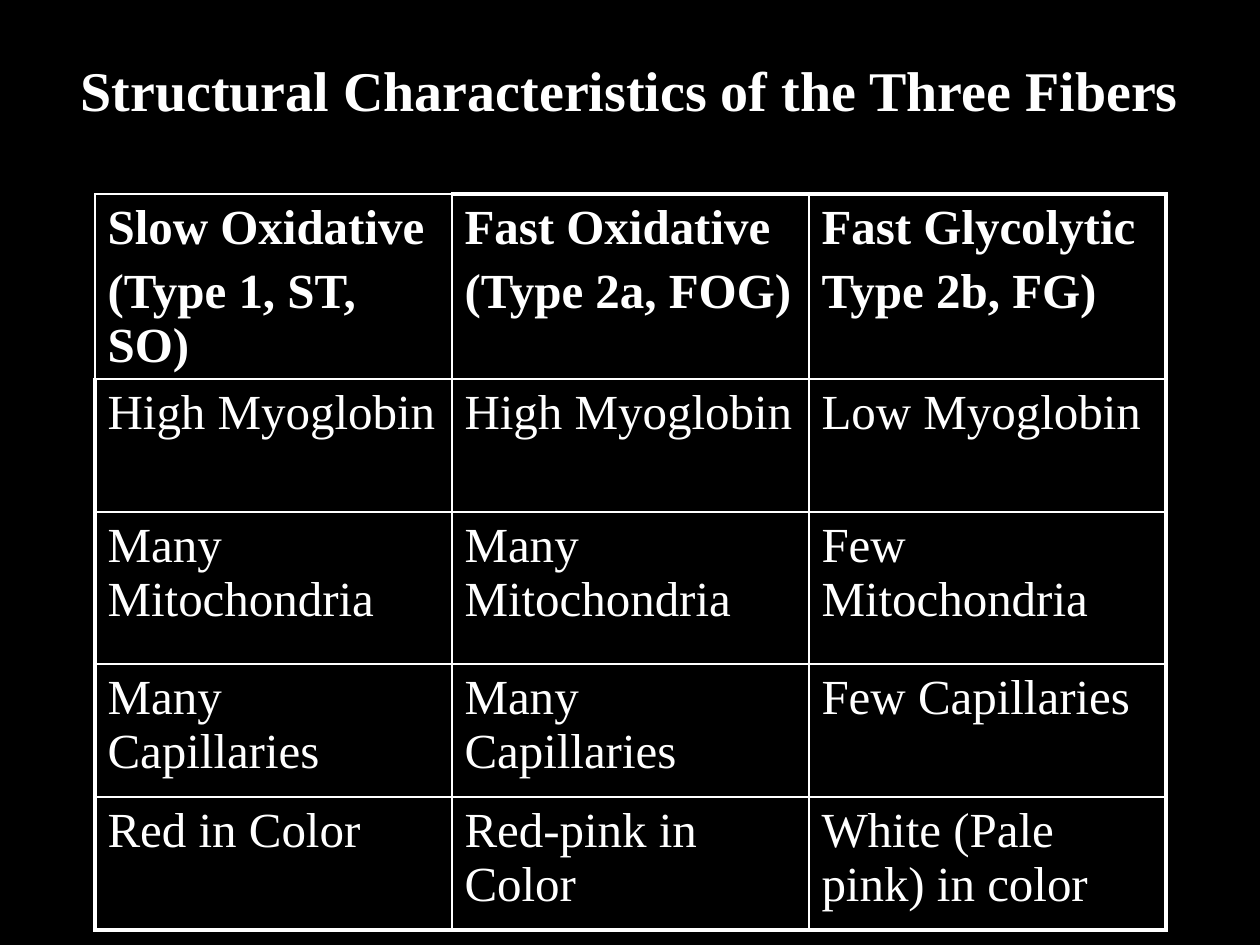
import lxml.etree
import pptx
import pptx.dml.color
import pptx.enum.text
import pptx.oxml.ns
import pptx.util

EMU_PER_PX = 914400 / 126
BLACK = pptx.dml.color.RGBColor(0x00, 0x00, 0x00)
WHITE = pptx.dml.color.RGBColor(0xFF, 0xFF, 0xFF)

TITLE = "Structural Characteristics of the Three Fibers"
FIBER_ROWS = [
    ["Slow Oxidative\n(Type 1, ST, SO)", "Fast Oxidative\n(Type 2a, FOG)", "Fast Glycolytic\nType 2b, FG)"],
    ["High Myoglobin", "High Myoglobin", "Low Myoglobin"],
    ["Many Mitochondria", "Many Mitochondria", "Few Mitochondria"],
    ["Many Capillaries", "Many Capillaries", "Few Capillaries"],
    ["Red in Color", "Red-pink in Color", "White (Pale pink) in color"],
]
ROW_HEIGHTS = [133, 133, 152, 133, 133]
COLUMN_WIDTH = 357


def px(length):
    return pptx.util.Emu(round(length * EMU_PER_PX))


def write_text(frame, text, size, bold=False, align=pptx.enum.text.PP_ALIGN.LEFT,
               space_before=0, font="Times New Roman", color=WHITE):
    """Put each line of text in a paragraph of its own."""
    for index, line in enumerate(text.split("\n")):
        paragraph = frame.paragraphs[0] if index == 0 else frame.add_paragraph()
        paragraph.alignment = align
        paragraph.space_before = pptx.util.Pt(space_before)
        run = paragraph.add_run()
        run.text = line
        run.font.name = font
        run.font.size = pptx.util.Pt(size)
        run.font.bold = bold
        run.font.color.rgb = color


def set_borders(cell, widths, color=WHITE):
    """Draw the cell's borders; widths in points, for left, right, top, bottom."""
    properties = cell._tc.get_or_add_tcPr()
    for index, (side, width) in enumerate(zip("LRTB", widths)):
        line = lxml.etree.Element(pptx.oxml.ns.qn("a:ln" + side), w=str(pptx.util.Pt(width)))
        fill = lxml.etree.SubElement(line, pptx.oxml.ns.qn("a:solidFill"))
        lxml.etree.SubElement(fill, pptx.oxml.ns.qn("a:srgbClr"), val=str(color))
        properties.insert(index, line)


class SlideBuilder:
    thin = 1
    thick = 2.25

    def __init__(self, presentation):
        self.slide = presentation.slides.add_slide(presentation.slide_layouts[5])
        self.slide.background.fill.solid()
        self.slide.background.fill.fore_color.rgb = BLACK

    def title(self, text, left, top, width, height):
        shape = self.slide.shapes.title
        shape.left, shape.top, shape.width, shape.height = map(px, (left, top, width, height))
        shape.fill.solid()
        shape.fill.fore_color.rgb = BLACK
        shape.line.color.rgb = BLACK
        shape.line.width = pptx.util.Pt(0.75)
        frame = shape.text_frame
        frame.auto_size = pptx.enum.text.MSO_AUTO_SIZE.NONE
        frame.vertical_anchor = pptx.enum.text.MSO_ANCHOR.MIDDLE
        write_text(frame, text, size=32, bold=True, align=pptx.enum.text.PP_ALIGN.CENTER)

    def table(self, rows, left, top, column_width, row_heights):
        row_count, column_count = len(rows), len(rows[0])
        table = self.slide.shapes.add_table(
            row_count, column_count, px(left), px(top),
            px(column_width * column_count), px(sum(row_heights))).table
        for column in table.columns:
            column.width = px(column_width)
        for row, height in zip(table.rows, row_heights):
            row.height = px(height)
        for row_index, texts in enumerate(rows):
            for column_index, text in enumerate(texts):
                cell = table.cell(row_index, column_index)
                cell.fill.solid()
                cell.fill.fore_color.rgb = BLACK
                write_text(cell.text_frame, text, size=28, bold=row_index == 0, space_before=5.6)
                # The outer frame is thick, except around the top-left cell.
                thick_sides = (
                    column_index == 0 and row_index > 0,
                    column_index == column_count - 1,
                    row_index == 0 and column_index > 0,
                    row_index == row_count - 1,
                )
                set_borders(cell, [self.thick if side else self.thin for side in thick_sides])


def main():
    presentation = pptx.Presentation()
    presentation.slide_width = px(1260)
    presentation.slide_height = px(945)
    builder = SlideBuilder(presentation)
    builder.title(TITLE, 42, 42, 1176, 94)
    builder.table(FIBER_ROWS, 95, 194, COLUMN_WIDTH, ROW_HEIGHTS)
    presentation.save("out.pptx")


if __name__ == "__main__":
    main()
